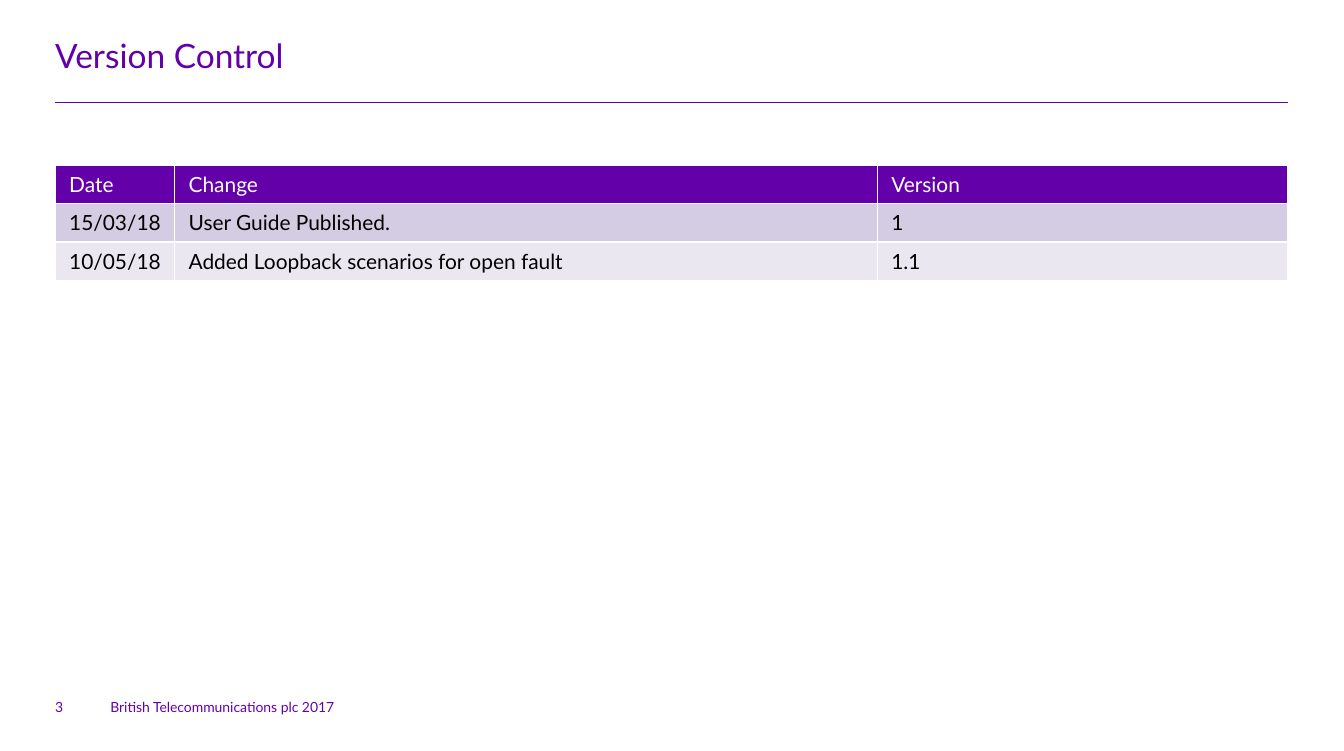
from dataclasses import dataclass
from lxml.etree import SubElement
from pptx import Presentation
from pptx.dml.color import RGBColor
from pptx.enum.shapes import MSO_CONNECTOR
from pptx.enum.text import MSO_ANCHOR, MSO_AUTO_SIZE, PP_ALIGN
from pptx.oxml.ns import qn
from pptx.util import Pt

PX = 9144


@dataclass(frozen=True)
class Theme:
    font: str = "Lato"
    purple: str = "6400AA"
    white: str = "FFFFFF"
    black: str = "000000"
    bands: tuple = ("D3CCE2", "EAE7F1")
    title_size: int = 24
    table_size: int = 15
    footer_size: int = 10


THEME = Theme()
COLUMN_WIDTHS = (119, 700, 409)
VERSIONS = (
    ("Date", "Change", "Version"),
    ("15/03/18", "User Guide Published.", "1"),
    ("10/05/18", "Added Loopback scenarios for open fault", "1.1"),
)


def emu(box):
    return [length * PX for length in box]


def write(frame, text, size, color=THEME.purple, anchor=MSO_ANCHOR.TOP):
    frame.word_wrap = True
    frame.auto_size = MSO_AUTO_SIZE.NONE
    frame.vertical_anchor = anchor
    frame.margin_left = frame.margin_right = 0
    frame.margin_top = frame.margin_bottom = 0
    write_paragraph(frame.paragraphs[0], text, size, color)


def write_paragraph(para, text, size, color):
    para.alignment = PP_ALIGN.LEFT
    span = para.add_run()
    span.text = text
    span.font.name = THEME.font
    span.font.size = Pt(size)
    span.font.color.rgb = RGBColor.from_string(color)


def add_header(page, box):
    left, top, width, height = box
    title = page.shapes.title
    title.left, title.top, title.width, title.height = emu(box)
    write(title.text_frame, "Version Control", THEME.title_size)
    rule_top = top + height + 20
    rule = page.shapes.add_connector(
        MSO_CONNECTOR.STRAIGHT, *emu((left, rule_top, left + width, rule_top)))
    rule.line.color.rgb = RGBColor.from_string(THEME.purple)
    rule.line.width = Pt(0.25)
    SubElement(rule._element.spPr, qn("a:effectLst"))


def add_borders(cell):
    properties = cell._tc.get_or_add_tcPr()
    for side in "LRTB":
        border = SubElement(properties, qn("a:ln" + side), w=str(Pt(1)))
        fill = SubElement(border, qn("a:solidFill"))
        SubElement(fill, qn("a:srgbClr"), val=THEME.white)


def add_version_table(page, box):
    table = page.shapes.add_table(len(VERSIONS), len(COLUMN_WIDTHS), *emu(box)).table
    for column, width in zip(table.columns, COLUMN_WIDTHS):
        column.width = width * PX
    for index, values in enumerate(VERSIONS):
        is_header = index == 0
        fill = THEME.purple if is_header else THEME.bands[(index - 1) % 2]
        color = THEME.white if is_header else THEME.black
        for cell, value in zip(table.rows[index].cells, values):
            cell.margin_left = 14 * PX
            cell.margin_right = 4 * PX
            cell.margin_top = cell.margin_bottom = 6 * PX
            cell.vertical_anchor = MSO_ANCHOR.MIDDLE
            write_paragraph(cell.text_frame.paragraphs[0], value, THEME.table_size, color)
            add_borders(cell)
            cell.fill.solid()
            cell.fill.fore_color.rgb = RGBColor.from_string(fill)


def add_footer(page, box):
    left, top, width, height = box
    parts = (
        ("3", (left, top, 39, height)),
        ("British Telecommunications plc 2017", (left + 55, top, width - 55, height)),
    )
    for text, part in parts:
        frame = page.shapes.add_textbox(*emu(part)).text_frame
        write(frame, text, THEME.footer_size, anchor=MSO_ANCHOR.BOTTOM)


def main():
    deck = Presentation()
    deck.slide_width, deck.slide_height = emu((1339, 748))
    page = deck.slides.add_slide(deck.slide_layouts[5])
    add_header(page, (55, 35, 1228, 47))
    add_version_table(page, (55, 165, 1228, 114))
    add_footer(page, (55, 682, 291, 30))
    deck.save("out.pptx")


if __name__ == "__main__":
    main()
